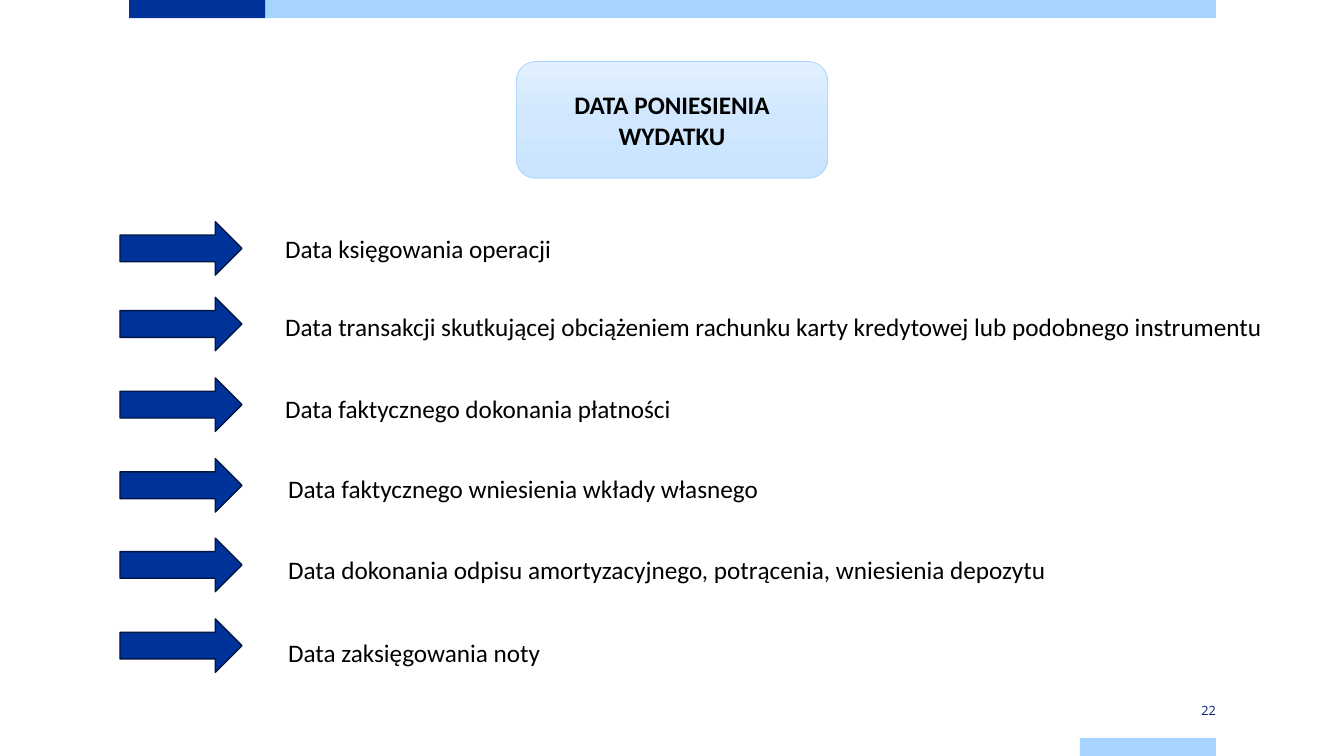
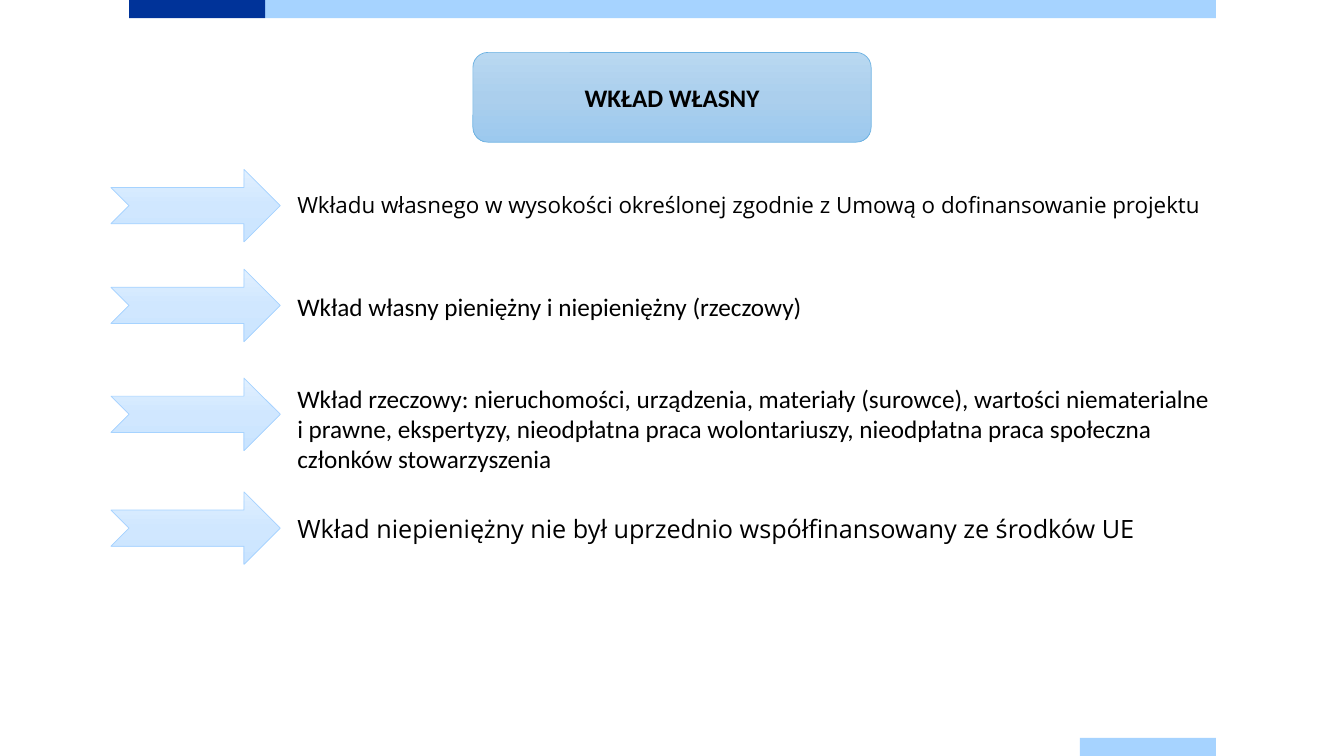
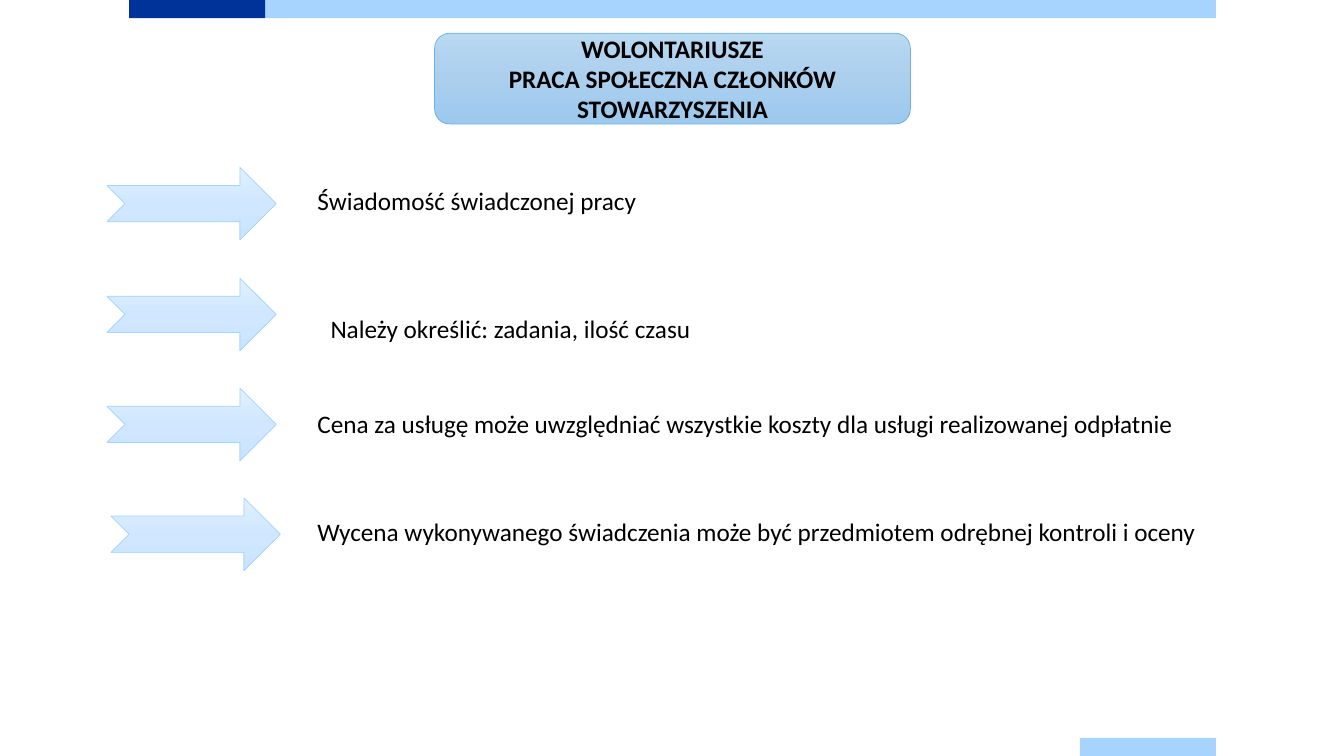
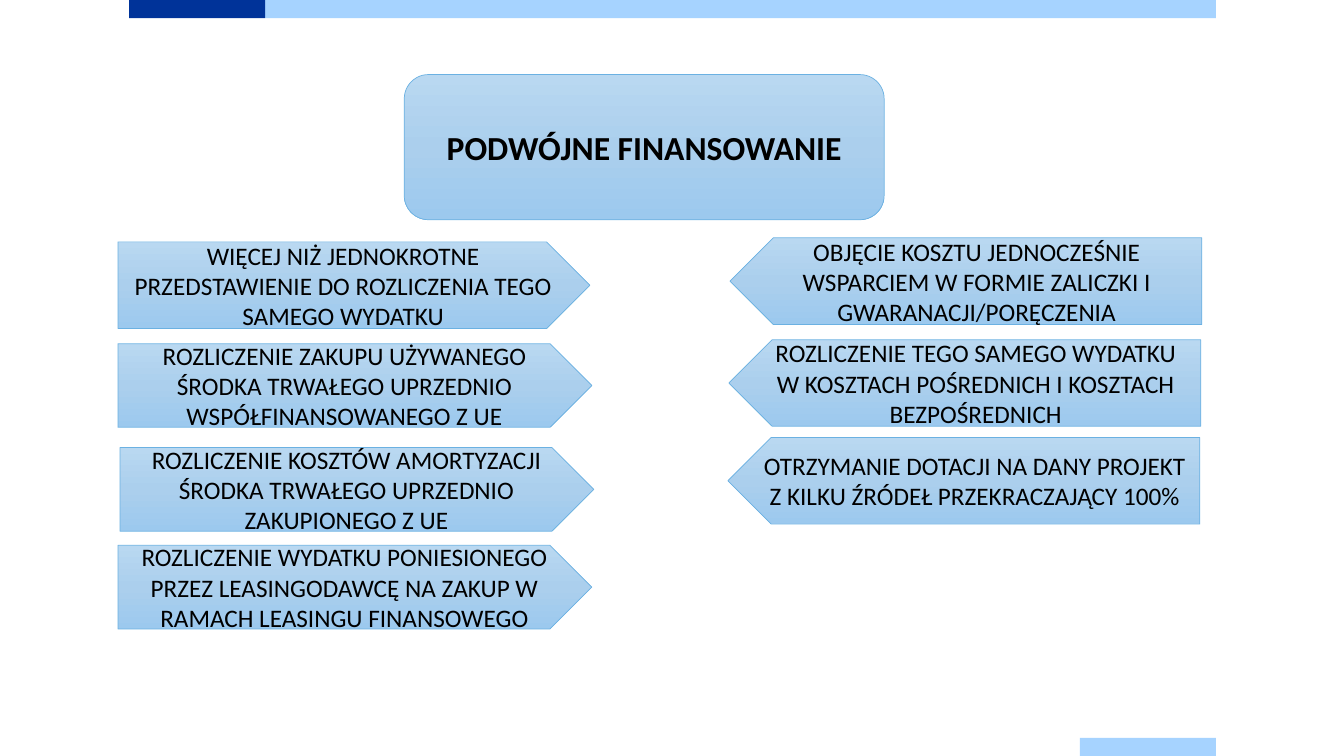
from copy import deepcopy
from dataclasses import dataclass
from typing import NamedTuple

from pptx import Presentation
from pptx.dml.color import RGBColor
from pptx.enum.shapes import MSO_SHAPE
from pptx.enum.text import MSO_ANCHOR, MSO_AUTO_SIZE, PP_ALIGN
from pptx.oxml.ns import qn
from pptx.util import Emu, Pt

PX = 9144  # EMU in one px, 100 px to the inch
WIDE, HIGH = 1333, 750

NAVY = RGBColor(0x00, 0x33, 0x99)
INK = RGBColor(0x00, 0x16, 0x43)
PAGE = RGBColor(0x00, 0x20, 0x73)
BLACK = RGBColor(0x00, 0x00, 0x00)
LIGHT = RGBColor(0xA6, 0xD3, 0xFF)
EDGE = RGBColor(0x6B, 0xB1, 0xE2)
PALE = (RGBColor(0xE1, 0xF0, 0xFF), RGBColor(0xD0, 0xE7, 0xFF), RGBColor(0xCA, 0xE4, 0xFF))
SKY = (RGBColor(0xB9, 0xD8, 0xF1), RGBColor(0xAB, 0xCF, 0xED), RGBColor(0x9C, 0xC9, 0xEE))

RECT = MSO_SHAPE.RECTANGLE
ROUND = MSO_SHAPE.ROUNDED_RECTANGLE
ARROW = MSO_SHAPE.RIGHT_ARROW
NOTCH = MSO_SHAPE.NOTCHED_RIGHT_ARROW
PLATE = MSO_SHAPE.PENTAGON
LEFT, MID, RIGHT = PP_ALIGN.LEFT, PP_ALIGN.CENTER, PP_ALIGN.RIGHT
TOP, CENTRE = MSO_ANCHOR.TOP, MSO_ANCHOR.MIDDLE
FIXED, GROW = MSO_AUTO_SIZE.NONE, MSO_AUTO_SIZE.SHAPE_TO_FIT_TEXT

SANS, OPEN = "Calibri", "Open Sans"


class Box(NamedTuple):
    x: int
    y: int
    w: int
    h: int

    def emu(self) -> list[Emu]:
        return [Emu(n * PX) for n in self]


class Tone(NamedTuple):
    fills: tuple
    line: RGBColor | None = None
    width: float = 0.5


DARK = Tone((NAVY,), INK, 1)
SOFT = Tone(PALE, LIGHT)
BLUE = Tone(SKY, EDGE)


@dataclass
class Row:
    """One arrow, given by its box, and the text beside it."""
    mark: Box
    text: str
    box: Box
    face: str = SANS
    size: float = 18
    lead: float = 1.0


@dataclass
class Plate:
    text: str
    box: Box
    flip: bool = False


@dataclass
class Page:
    title: str
    box: Box
    tone: Tone = BLUE
    size: float = 18
    kind: int = NOTCH
    rows: tuple = ()
    plates: tuple = ()


BANDS = (
    (Box(128, 0, 135, 18), NAVY),
    (Box(263, 0, 943, 18), LIGHT),
    (Box(1071, 732, 135, 18), LIGHT),
)


def dart(y: int) -> Box:
    return Box(119, y, 121, 53)


def notch(y: int, x: int = 110) -> Box:
    return Box(x, y, 168, 72)


PAGES = (
    Page("DATA PONIESIENIA WYDATKU", Box(512, 61, 309, 116), SOFT, kind=ARROW, rows=(
        Row(dart(220), "Data księgowania operacji", Box(273, 227, 300, 40)),
        Row(dart(295), "Data transakcji skutkującej obciążeniem rachunku karty kredytowej "
            "lub podobnego instrumentu", Box(273, 304, 997, 40)),
        Row(dart(375), "Data faktycznego dokonania płatności", Box(273, 385, 548, 40)),
        Row(dart(455), "Data faktycznego wniesienia wkłady własnego", Box(276, 465, 525, 40)),
        Row(dart(534), "Data dokonania odpisu amortyzacyjnego, potrącenia, "
            "wniesienia depozytu", Box(276, 545, 795, 40)),
        Row(dart(614), "Data zaksięgowania noty", Box(276, 627, 300, 40)),
    )),
    Page("WKŁAD WŁASNY", Box(469, 52, 395, 89), rows=(
        Row(notch(168), "Wkładu własnego w wysokości określonej zgodnie z Umową "
            "o dofinansowanie projektu", Box(285, 185, 939, 37), OPEN, 16),
        Row(notch(267), "Wkład własny pieniężny i niepieniężny (rzeczowy)",
            Box(285, 284, 569, 40)),
        Row(notch(375), "Wkład rzeczowy: nieruchomości, urządzenia, materiały (surowce), "
            "wartości niematerialne\vi prawne, ekspertyzy, nieodpłatna praca wolontariuszy, "
            "nieodpłatna praca społeczna członków stowarzyszenia", Box(285, 375, 939, 101)),
        Row(notch(488), "Wkład niepieniężny nie był uprzednio współfinansowany ze środków UE",
            Box(285, 504, 938, 40), OPEN),
    )),
    Page("WOLONTARIUSZE\vPRACA SPOŁECZNA CZŁONKÓW STOWARZYSZENIA",
         Box(431, 33, 472, 90), rows=(
             Row(notch(166, 106), "Świadomość świadczonej pracy", Box(305, 179, 349, 40)),
             Row(notch(276, 106), "Należy określić: zadania, ilość czasu",
                 Box(318, 291, 903, 51), lead=1.5),
             Row(notch(385, 106), "Cena za usługę może uwzględniać wszystkie koszty dla usługi "
                 "realizowanej odpłatnie", Box(305, 400, 916, 40)),
             Row(notch(494), "Wycena wykonywanego świadczenia może być przedmiotem "
                 "odrębnej kontroli i oceny", Box(305, 507, 955, 40)),
         )),
    Page("PODWÓJNE FINANSOWANIE", Box(401, 74, 476, 144), size=24, plates=(
        Plate("WIĘCEJ NIŻ JEDNOKROTNE PRZEDSTAWIENIE DO ROZLICZENIA TEGO SAMEGO WYDATKU",
              Box(117, 240, 468, 86)),
        Plate("ROZLICZENIE ZAKUPU UŻYWANEGO ŚRODKA TRWAŁEGO UPRZEDNIO "
              "WSPÓŁFINANSOWANEGO Z UE", Box(117, 341, 470, 83)),
        Plate("ROZLICZENIE KOSZTÓW AMORTYZACJI ŚRODKA TRWAŁEGO UPRZEDNIO ZAKUPIONEGO Z UE",
              Box(119, 444, 470, 83)),
        Plate("ROZLICZENIE WYDATKU PONIESIONEGO PRZEZ LEASINGODAWCĘ NA ZAKUP "
              "W RAMACH LEASINGU FINANSOWEGO", Box(117, 541, 470, 83)),
        Plate("OBJĘCIE KOSZTU JEDNOCZEŚNIE WSPARCIEM W FORMIE ZALICZKI "
              "I GWARANACJI/PORĘCZENIA", Box(724, 236, 468, 86), True),
        Plate("ROZLICZENIE TEGO SAMEGO WYDATKU\vW KOSZTACH POŚREDNICH I KOSZTACH "
              "BEZPOŚREDNICH", Box(723, 337, 468, 86), True),
        Plate("OTRZYMANIE DOTACJI NA DANY PROJEKT Z KILKU ŹRÓDEŁ PRZEKRACZAJĄCY 100%",
              Box(722, 434, 468, 86), True),
    )),
)


def write(shape, text: str, *, size: float = 18, face: str = SANS, color: RGBColor = BLACK,
          bold: bool = False, align=LEFT, anchor=TOP, fit=FIXED, lead: float = 1.0,
          pad: tuple[int, int] = (10, 5)) -> None:
    """Set text and format; pad is the side and the top inset in px."""
    frame = shape.text_frame
    frame.word_wrap = True
    frame.auto_size = fit
    frame.vertical_anchor = anchor
    frame.margin_left = frame.margin_right = Emu(pad[0] * PX)
    frame.margin_top = frame.margin_bottom = Emu(pad[1] * PX)
    frame.text = text
    para = frame.paragraphs[0]
    para.alignment = align
    para.line_spacing = lead
    for run in para.runs:
        font = run.font
        font.size, font.name, font.bold = Pt(size), face, bold
        font.color.rgb = color


def shade(shape, fills: tuple) -> None:
    """Fill with one colour, or with even gradient stops from top to bottom."""
    fill = shape.fill
    if len(fills) == 1:
        fill.solid()
        fill.fore_color.rgb = fills[0]
        return
    fill.gradient()
    fill.gradient_angle = 270
    stops = shape.element.find(".//" + qn("a:gsLst"))
    while len(stops) < len(fills):
        stops.insert(1, deepcopy(stops[0]))
    for i, (stop, color) in enumerate(zip(fill.gradient_stops, fills)):
        stop.color.rgb = color
        stop.position = i / (len(fills) - 1)


def draw(slide, kind: int, box: Box, tone: Tone):
    shape = slide.shapes.add_shape(kind, *box.emu())
    shape.shadow.inherit = False
    shade(shape, tone.fills)
    if tone.line is None:
        shape.line.fill.background()
    else:
        shape.line.color.rgb = tone.line
        shape.line.width = Pt(tone.width)
    return shape


def label(slide, box: Box, text: str, **form) -> None:
    write(slide.shapes.add_textbox(*box.emu()), text, **form)


def head(slide, page: Page) -> None:
    """Put the title placeholder on top of its rounded card."""
    draw(slide, ROUND, page.box, page.tone)
    title = slide.shapes.title
    title.left, title.top, title.width, title.height = page.box.emu()
    write(title, page.title, size=page.size, bold=True, align=MID, anchor=CENTRE)
    title.element.getparent().append(title.element)


def build(slide, page: Page) -> None:
    head(slide, page)
    for row in page.rows:
        draw(slide, page.kind, row.mark, DARK if page.kind == ARROW else SOFT)
        label(slide, row.box, row.text, face=row.face, size=row.size, lead=row.lead, fit=GROW)
    for plate in page.plates:
        shape = draw(slide, PLATE, plate.box, BLUE)
        if plate.flip:
            shape.element.find(".//" + qn("a:xfrm")).set("flipH", "1")
        write(shape, plate.text, align=MID, anchor=CENTRE)


def brand(slide, layout) -> None:
    """Move the bands, drawn on a slide, to the layout that all slides share."""
    for box, color in BANDS:
        band = draw(slide, RECT, box, Tone((color,)))
        layout.shapes.element.insert(2, band.element)


def main() -> None:
    deck = Presentation()
    deck.slide_width, deck.slide_height = Emu(WIDE * PX), Emu(HIGH * PX)
    layout = deck.slide_layouts.get_by_name("Title Only")
    slides = [deck.slides.add_slide(layout) for _ in PAGES]
    brand(slides[0], layout)
    for slide, page in zip(slides, PAGES):
        build(slide, page)
    label(slides[0], Box(1071, 696, 135, 18), "22", size=9.1, face=OPEN, color=PAGE,
          align=RIGHT, anchor=CENTRE, pad=(0, 8))
    deck.save("out.pptx")


if __name__ == "__main__":
    main()
